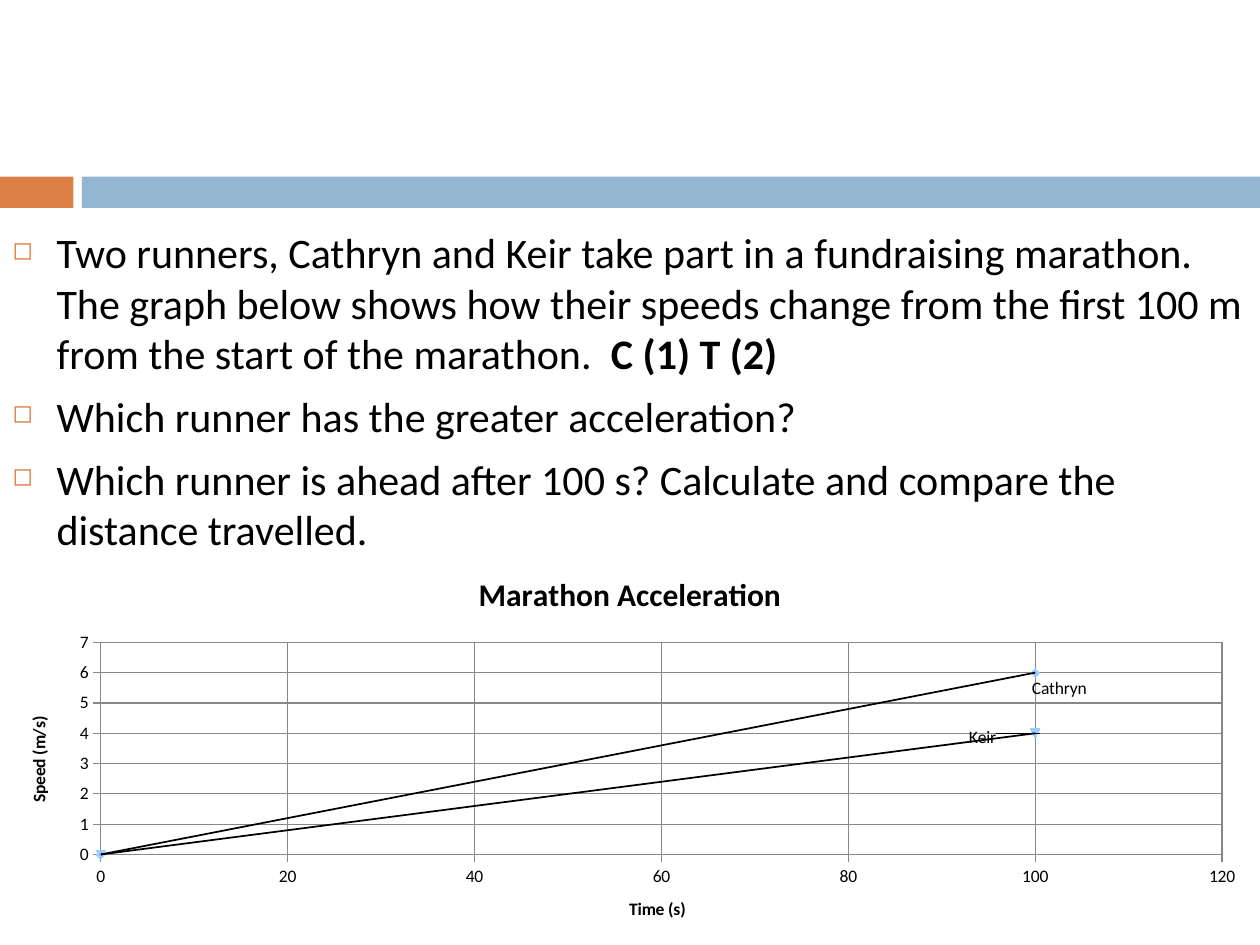
from lxml.etree import SubElement
from pptx import Presentation
from pptx.chart.data import XyChartData
from pptx.dml.color import RGBColor
from pptx.enum.chart import XL_CHART_TYPE, XL_LABEL_POSITION, XL_MARKER_STYLE, XL_TICK_MARK
from pptx.enum.shapes import MSO_SHAPE
from pptx.oxml import parse_xml
from pptx.oxml.ns import nsdecls, qn
from pptx.util import Cm, Pt

ORANGE = RGBColor(0xDD, 0x80, 0x47)
BLUE = RGBColor(0x94, 0xB6, 0xD2)
MARKER_BLUE = RGBColor(0x99, 0xCC, 0xFF)
GRID_GREY = RGBColor(0x87, 0x87, 0x87)
BLACK = RGBColor(0, 0, 0)
FONT = "Calibri"

# Each question is a list of (wording, bold) pieces
QUESTIONS = [
    [("Two runners, Cathryn and Keir take part in a fundraising marathon. "
      "The graph below shows how their speeds change from the first 100 m "
      "from the start of the marathon. ", False), (" C (1) T (2)", True)],
    [("Which runner has the greater acceleration?", False)],
    [("Which runner is ahead after 100 s? Calculate and compare the "
      "distance travelled.", False)],
]

# Runner, final speed, marker, label shift as a share of the chart
RUNNERS = [
    ("Cathryn", 6, XL_MARKER_STYLE.DIAMOND, (-0.01, 0.04)),
    ("Keir", 4, None, (-0.06, 0.01)),
]


def apply_format(target, values):
    for name, value in values.items():
        setattr(target, name, value)


def style_font(font, size, bold=False):
    apply_format(font, {"name": FONT, "size": Pt(size), "bold": bold})
    font.color.rgb = BLACK


def add_band(slide, left, width, color):
    band = slide.shapes.add_shape(MSO_SHAPE.RECTANGLE, left, Cm(3.56), width, Cm(0.63))
    band.shadow.inherit = False
    band.fill.solid()
    band.fill.fore_color.rgb = color
    band.line.fill.background()


def add_bullet(paragraph):
    properties = paragraph._p.get_or_add_pPr()
    properties.set("marL", str(Cm(0.89)))
    properties.set("indent", str(-Cm(0.89)))
    bullet_color = SubElement(properties, qn("a:buClr"))
    SubElement(bullet_color, qn("a:srgbClr"), val=str(ORANGE))
    SubElement(properties, qn("a:buSzPct"), val="60000")
    SubElement(properties, qn("a:buChar"), char="◻")


def add_questions(slide):
    body = slide.shapes.add_textbox(0, Cm(4.45), Cm(25.4), Cm(12.5)).text_frame
    body.word_wrap = True
    for index, pieces in enumerate(QUESTIONS):
        paragraph = body.add_paragraph() if index else body.paragraphs[0]
        paragraph.space_before = Pt(7)
        add_bullet(paragraph)
        for wording, bold in pieces:
            run = paragraph.add_run()
            run.text = wording
            style_font(run.font, 24, bold)


def set_title(title, wording, size):
    title.text_frame.text = wording
    style_font(title.text_frame.paragraphs[0].runs[0].font, size, True)


def manual_layout(x, y, extra=""):
    return parse_xml(
        f'<c:layout {nsdecls("c")}><c:manualLayout>{extra}'
        f'<c:x val="{x}"/><c:y val="{y}"/></c:manualLayout></c:layout>')


def format_axis(axis, wording, maximum, step):
    apply_format(axis, {
        "minimum_scale": 0, "maximum_scale": maximum, "major_unit": step,
        "has_major_gridlines": True, "major_tick_mark": XL_TICK_MARK.OUTSIDE,
        "minor_tick_mark": XL_TICK_MARK.NONE,
    })
    for line in (axis.format.line, axis.major_gridlines.format.line):
        line.color.rgb = GRID_GREY
        line.width = Pt(0.75)
    style_font(axis.tick_labels.font, 10)
    axis.tick_labels.number_format = "General"
    axis.tick_labels.number_format_is_linked = False
    set_title(axis.axis_title, wording, 10)


def label_last_point(series, shift):
    label = series.points[1].data_label
    style_font(label.font, 10)
    label.position = XL_LABEL_POSITION.RIGHT
    # Show the runner's name and move it beside the line
    labels = series._element.find(qn("c:dLbls"))
    for show_value in labels.iter(qn("c:showVal")):
        show_value.set("val", "0")
    point_label = labels.find(qn("c:dLbl"))
    point_label.find(qn("c:showSerName")).set("val", "1")
    point_label.find(qn("c:idx")).addnext(manual_layout(*shift))


def add_trend_line(series):
    trend = parse_xml(
        f'<c:trendline {nsdecls("c", "a")}><c:spPr><a:ln w="{Pt(1)}"><a:solidFill>'
        f'<a:srgbClr val="{BLACK}"/></a:solidFill></a:ln></c:spPr>'
        '<c:trendlineType val="linear"/><c:dispRSqr val="0"/><c:dispEq val="0"/>'
        '</c:trendline>')
    series._element.find(qn("c:xVal")).addprevious(trend)


def format_runner(series, marker_style, shift):
    series.smooth = False
    series.format.line.fill.background()
    if marker_style is not None:
        series.marker.style = marker_style
    series.marker.size = 5
    series.marker.format.fill.solid()
    series.marker.format.fill.fore_color.rgb = MARKER_BLUE
    series.marker.format.line.fill.background()
    label_last_point(series, shift)
    add_trend_line(series)


def place_plot_area(chart):
    layout = manual_layout(
        0.08, 0.23, '<c:layoutTarget val="inner"/><c:xMode val="edge"/><c:yMode val="edge"/>')
    for side, share in (("w", 0.89), ("h", 0.54)):
        SubElement(layout[0], qn(f"c:{side}"), val=str(share))
    plot_area = chart._chartSpace.chart.plotArea
    for old_layout in plot_area.findall(qn("c:layout")):
        plot_area.remove(old_layout)
    plot_area.insert(0, layout)


def add_speed_chart(slide):
    speeds = XyChartData()
    for runner, final_speed, _, _ in RUNNERS:
        points = speeds.add_series(runner)
        points.add_data_point(0, 0)
        points.add_data_point(100, final_speed)
    chart = slide.shapes.add_chart(
        XL_CHART_TYPE.XY_SCATTER, 0, Cm(11.13), Cm(25.4), Cm(7.92), speeds).chart
    apply_format(chart, {"has_legend": False, "has_title": True})
    style_font(chart.font, 10)
    chart.plots[0].vary_by_categories = False
    set_title(chart.chart_title, "Marathon Acceleration", 18)
    format_axis(chart.category_axis, "Time (s)", 120, 20)
    format_axis(chart.value_axis, "Speed (m/s)", 7, 1)
    for series, (_, _, marker_style, shift) in zip(chart.plots[0].series, RUNNERS):
        format_runner(series, marker_style, shift)
    place_plot_area(chart)


def main():
    presentation = Presentation()
    apply_format(presentation, {"slide_width": Cm(25.4), "slide_height": Cm(19.05)})
    slide = presentation.slides.add_slide(presentation.slide_layouts[6])

    # Coloured bands
    add_band(slide, 0, Cm(1.48), ORANGE)
    add_band(slide, Cm(1.65), Cm(23.75), BLUE)

    # Questions and graph
    add_questions(slide)
    add_speed_chart(slide)

    presentation.save("out.pptx")


if __name__ == "__main__":
    main()
